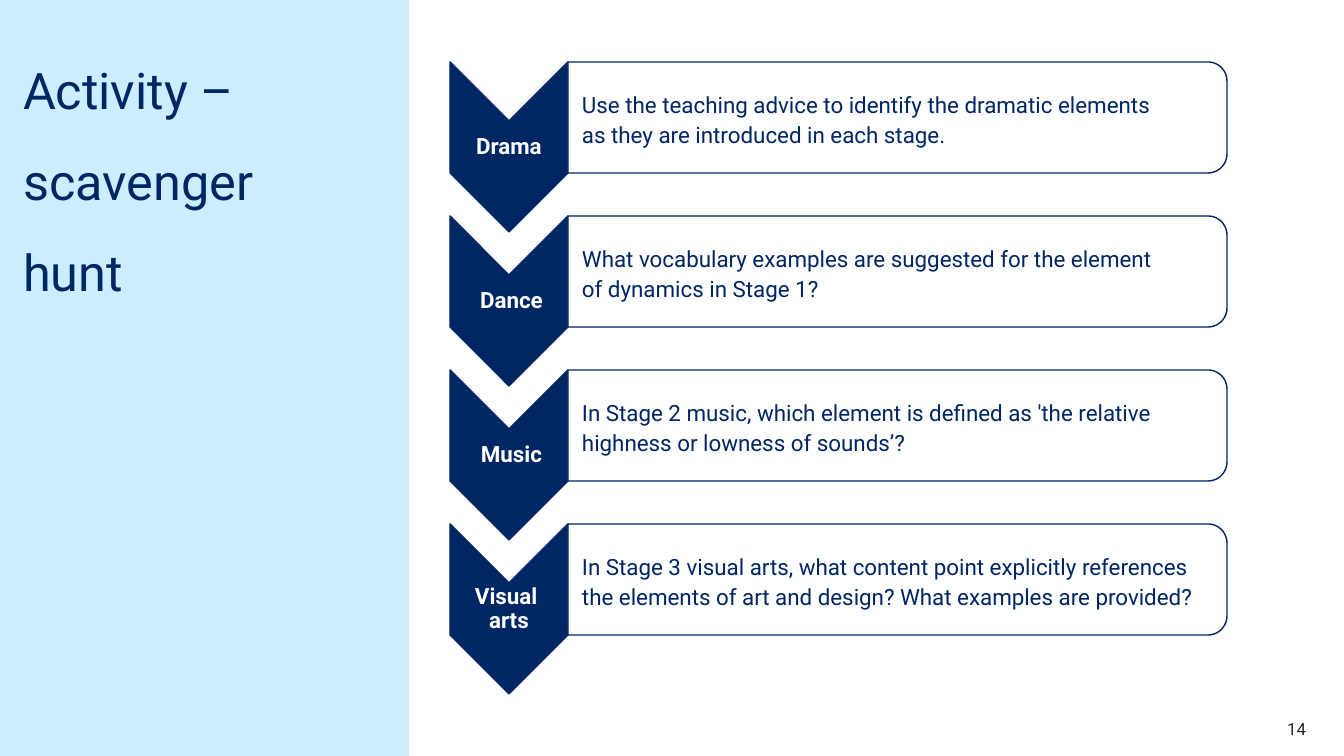
import math

from lxml import etree
from pptx import Presentation
from pptx import util as u
from pptx.dml.color import RGBColor
from pptx.enum import shapes, text
from pptx.oxml.ns import qn

PX = 914400 / 100.8
NAVY, SKY, WHITE, INK = "002664", "CBEDFD", "FFFFFF", "22272B"
LEFT, SEAM, RIGHT = 450, 568, 1227
TOP, PITCH, HEIGHT, NOTCH, RADIUS = 62, 154, 111, 59, 19
ACTIVITIES = [
    ("Drama", 0, "Use the teaching advice to identify the dramatic elements \v"
     "as they are introduced in each stage."),
    ("Dance", 5, "What vocabulary examples are suggested for the element \v"
     "of dynamics in Stage 1?"),
    ("Music", 5, "In Stage 2 music, which element is defined as 'the relative "
     "highness or lowness of sounds’?"),
    ("Visual \varts", 0, "In Stage 3 visual arts, what content point explicitly "
     "references the elements of art and design? What examples are provided?"),
]


def emu(px):
    """Turn px into EMU."""
    return u.Emu(round(px * PX))


def color(value):
    """Turn a hex string into a colour."""
    return RGBColor.from_string(value)


def write(sp, words, size=16, fill=NAVY, bold=False, align="LEFT", anchor="TOP",
          insets=(0, 0, 0, 0), spacing=1.0, after=0):
    """Put one formatted paragraph into a shape."""
    tf = sp.text_frame
    tf.word_wrap = True
    tf.vertical_anchor = getattr(text.MSO_ANCHOR, anchor)
    (tf.margin_left, tf.margin_top,
     tf.margin_right, tf.margin_bottom) = map(emu, insets)
    p = tf.paragraphs[0]
    p.text = words
    p.alignment = getattr(text.PP_ALIGN, align)
    p.line_spacing = spacing
    p.space_after = u.Pt(after)
    for item in (p, *p.runs):
        item.font.name = "Roboto"
        item.font.size = u.Pt(size)
        item.font.bold = bold
        item.font.color.rgb = color(fill)


class Deck:
    """Hold the style and the current slide."""

    def __init__(self):
        """Start a presentation with one blank slide."""
        self.prs = Presentation()
        self.prs.slide_width, self.prs.slide_height = emu(1344), emu(756)
        self.s = self.prs.slides.add_slide(self.prs.slide_layouts[6])

    def paint(self, sp, fill, line=None):
        """Set fill and outline without a shadow."""
        sp.shadow.inherit = False
        sp.fill.solid()
        sp.fill.fore_color.rgb = color(fill)
        if line:
            sp.line.color.rgb = color(line)
            sp.line.width = u.Pt(1)
        else:
            sp.line.fill.background()
        return sp

    def panel(self, x, y, w, h, fill):
        """Draw a plain rectangle."""
        sp = self.s.shapes.add_shape(shapes.MSO_SHAPE.RECTANGLE,
                                     *map(emu, (x, y, w, h)))
        return self.paint(sp, fill)

    def label(self, x, y, w, h, words, **style):
        """Draw a text box."""
        sp = self.s.shapes.add_textbox(*map(emu, (x, y, w, h)))
        write(sp, words, **style)

    def outline(self, points, fill):
        """Draw a closed polygon with a navy outline."""
        start, *rest = [(emu(x), emu(y)) for x, y in points]
        builder = self.s.shapes.build_freeform(*start)
        builder.add_line_segments(rest, close=True)
        return self.paint(builder.convert_to_shape(), fill, NAVY)

    def chevron(self, y, words, shift):
        """Draw a downward chevron with its subject."""
        mid, low = (LEFT + SEAM) / 2, y + HEIGHT
        sp = self.outline([(SEAM, y), (SEAM, low), (mid, low + NOTCH), (LEFT, low),
                           (LEFT, y), (mid, y + NOTCH)], NAVY)
        write(sp, words, fill=WHITE, bold=True, align="CENTER", anchor="MIDDLE",
              insets=(1 + shift, 60, 1, 60), spacing=0.9)

    def card(self, y, words):
        """Draw a task box with rounded right corners."""
        x, low = RIGHT - RADIUS, y + HEIGHT
        arc = [(RADIUS * math.sin(math.radians(a)), RADIUS * math.cos(math.radians(a)))
               for a in range(0, 91, 6)]
        upper = [(x + dx, y + RADIUS - dy) for dx, dy in arc]
        lower = [(x + dx, low - RADIUS + dy) for dx, dy in reversed(arc)]
        sp = self.outline([(SEAM, y), *upper, *lower, (SEAM, low)], WHITE)
        fill = sp.fill.fore_color._xFill.find(qn("a:srgbClr"))
        etree.SubElement(fill, qn("a:alpha"), val="90000")
        write(sp, words, anchor="MIDDLE", insets=(14, 7, 7, 7), spacing=1.14, after=6)


def main():
    """Build and save the slide."""
    deck = Deck()
    deck.panel(0, 0, 409, 756, SKY)
    deck.label(23, 29, 363, 203, "Activity – scavenger \vhunt", size=36,
               spacing=1.5, after=12)
    for i, (subject, shift, task) in enumerate(ACTIVITIES):
        y = TOP + i * PITCH
        deck.chevron(y, subject, shift)
        deck.card(y, task)
    deck.label(1227, 719, 79, 20, "14", size=12, fill=INK, align="RIGHT")
    deck.prs.save("out.pptx")


if __name__ == "__main__":
    main()
